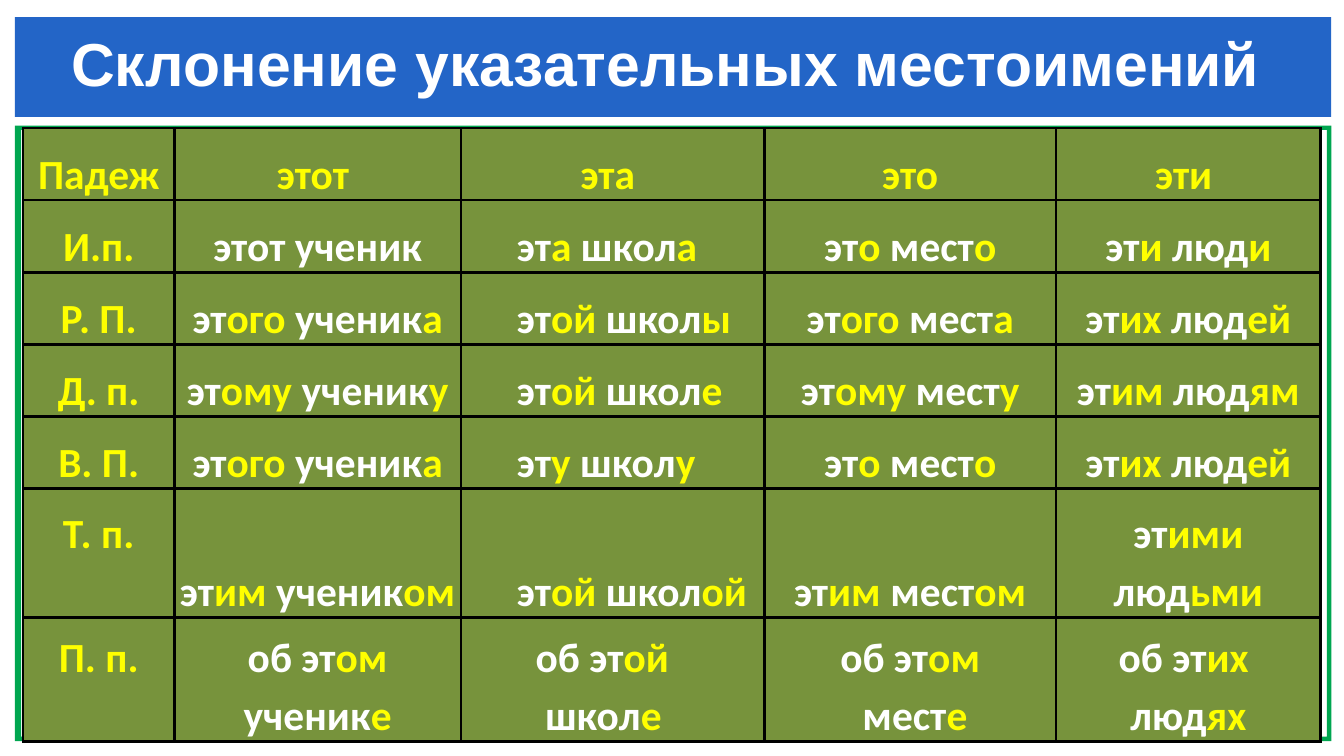
from dataclasses import dataclass

from lxml import etree
from pptx import Presentation
from pptx.dml.color import RGBColor
from pptx.enum.shapes import MSO_SHAPE
from pptx.enum.text import MSO_ANCHOR, MSO_AUTO_SIZE, PP_ALIGN
from pptx.oxml.ns import qn
from pptx.util import Pt

RECT = MSO_SHAPE.RECTANGLE
BOTTOM, MIDDLE = MSO_ANCHOR.BOTTOM, MSO_ANCHOR.MIDDLE
LEFT, CENTER = PP_ALIGN.LEFT, PP_ALIGN.CENTER
FIXED = MSO_AUTO_SIZE.NONE

WHITE, YELLOW, BLACK = "FFFFFF", "FFFF00", "000000"
BLUE, GREEN, OLIVE = "2365C7", "00A650", "77933C"

WIDTHS = (51.2, 96.8, 102.6, 98.7, 89.4)
LINE = 19.6  # height of one line of table text
SCHOOL = 2  # the column set flush left


@dataclass
class Row:
    """Cell texts: "|" switches white and yellow, a newline starts a paragraph."""
    cells: tuple[str, ...]
    height: float = 24.4
    indents: tuple[float, ...] = (19,)
    lift: float = 0


ROWS = (
    Row(("|Падеж", "|этот ", "|эта ", "|это", "|эти ")),
    Row(("|И.п.", "этот ученик", "эт|а| школ|а", "эт|о| мест|о", "эт|и |люд|и")),
    Row(("|Р. П.", "эт|ого| ученик|а", "эт|ой| школ|ы", "эт|ого| мест|а",
         "эт|их| люд|ей")),
    Row(("|Д. п.", "эт|ому| ученик|у", "эт|ой| школ|е", "эт|ому| мест|у",
         "эт|им| люд|ям")),
    Row(("|В. П.", "эт|ого| ученик|а", "эт|у| школ|у", "эт|о| мест|о",
         "эт|их| люд|ей")),
    Row(("|Т. п.", "эт|им| ученик|ом", "эт|ой| школ|ой", "эт|им| мест|ом",
         "эт|ими| люд|ьми"), 43.6, lift=LINE),
    Row(("|П. п.", "об эт|ом |ученик|е", "об эт|ой\nшкол|е",
         "об эт|ом\n мест|е", "об эт|их \nлюд|ях"), 42, (25.3, 28.5), LINE),
)


def paint(target, color: str) -> None:
    """Give a fill or a font a solid colour."""
    if hasattr(target, "solid"):
        target.solid()
        target.fore_color.rgb = RGBColor.from_string(color)
    else:
        target.color.rgb = RGBColor.from_string(color)


def style(para, face: str, size: float) -> None:
    para.font.name, para.font.size, para.font.bold = face, Pt(size), True


def finish(shape, color: str) -> None:
    """Leave a shape with a plain fill only."""
    paint(shape.fill, color)
    shape.line.fill.background()
    shape.shadow.inherit = False


def add_frame(slide) -> None:
    loops = [
        [(Pt(x), Pt(y)) for x, y in ((l, t), (r, t), (r, b), (l, b))]
        for l, t, r, b in ((5, 42.5, 450, 250.6), (7.2, 43.9, 448.5, 249.1))
    ]
    outer, inner = loops
    pen = slide.shapes.build_freeform(*outer[0])
    pen.add_line_segments(outer[1:], close=True)
    pen.move_to(*inner[0])
    pen.add_line_segments(inner[:0:-1], close=True)
    finish(pen.convert_to_shape(), GREEN)


def add_title(slide) -> None:
    band = slide.shapes.add_shape(RECT, Pt(5), Pt(5.8), Pt(445), Pt(33.8))
    finish(band, BLUE)
    title = slide.shapes.title
    band._element.addnext(title._element)
    title.left, title.top = Pt(24), Pt(8.5)
    title.width, title.height = Pt(407), Pt(25)
    frame = title.text_frame
    frame.margin_left = frame.margin_right = Pt(0)
    frame.margin_top = frame.margin_bottom = Pt(0)
    frame.auto_size, frame.vertical_anchor = FIXED, MIDDLE
    frame.text = "Cклонение указательных местоимений"
    para = frame.paragraphs[0]
    para.alignment = LEFT
    style(para, "Arial", 20.5)
    paint(para.font, WHITE)


def add_edges(cell) -> None:
    props = cell._tc.get_or_add_tcPr()
    for side in ("a:lnL", "a:lnR", "a:lnT", "a:lnB"):
        edge = etree.SubElement(props, qn(side), w=str(Pt(1)))
        fill = etree.SubElement(edge, qn("a:solidFill"))
        etree.SubElement(fill, qn("a:srgbClr"), val=BLACK)


def fill_cell(cell, text: str, indents: tuple[float, ...], lift: float) -> None:
    """Write one cell; indents make it flush left, lift raises its text."""
    add_edges(cell)
    paint(cell.fill, OLIVE)
    cell.margin_left = cell.margin_right = cell.margin_top = Pt(0)
    cell.margin_bottom = Pt(lift)
    cell.vertical_anchor = BOTTOM
    frame = cell.text_frame
    for n, line in enumerate(text.split("\n")):
        para = frame.add_paragraph() if n else frame.paragraphs[0]
        para.alignment = LEFT if indents else CENTER
        para.line_spacing = 1.15
        style(para, "Calibri", 14)
        if indents:
            para._p.get_or_add_pPr().set("marL", str(Pt(indents[n])))
        for k, part in enumerate(line.split("|")):
            if part:
                run = para.add_run()
                run.text = part
                paint(run.font, YELLOW if k % 2 else WHITE)


def add_cases(slide) -> None:
    high = sum(row.height for row in ROWS)
    table = slide.shapes.add_table(
        len(ROWS), len(WIDTHS), Pt(7.8), Pt(43.3), Pt(sum(WIDTHS)), Pt(high)
    ).table
    table.first_row = table.horz_banding = False
    for col, width in zip(table.columns, WIDTHS):
        col.width = Pt(width)
    for r, row in enumerate(ROWS):
        table.rows[r].height = Pt(row.height)
        for c, text in enumerate(row.cells):
            flush = c == SCHOOL and r > 0
            fill_cell(table.cell(r, c), text, row.indents if flush else (),
                      0 if c else row.lift)


def main() -> None:
    deck = Presentation()
    deck.slide_width, deck.slide_height = Pt(454.3), Pt(255.6)
    slide = deck.slides.add_slide(deck.slide_layouts[5])
    add_frame(slide)
    add_title(slide)
    add_cases(slide)
    deck.save("out.pptx")


if __name__ == "__main__":
    main()
